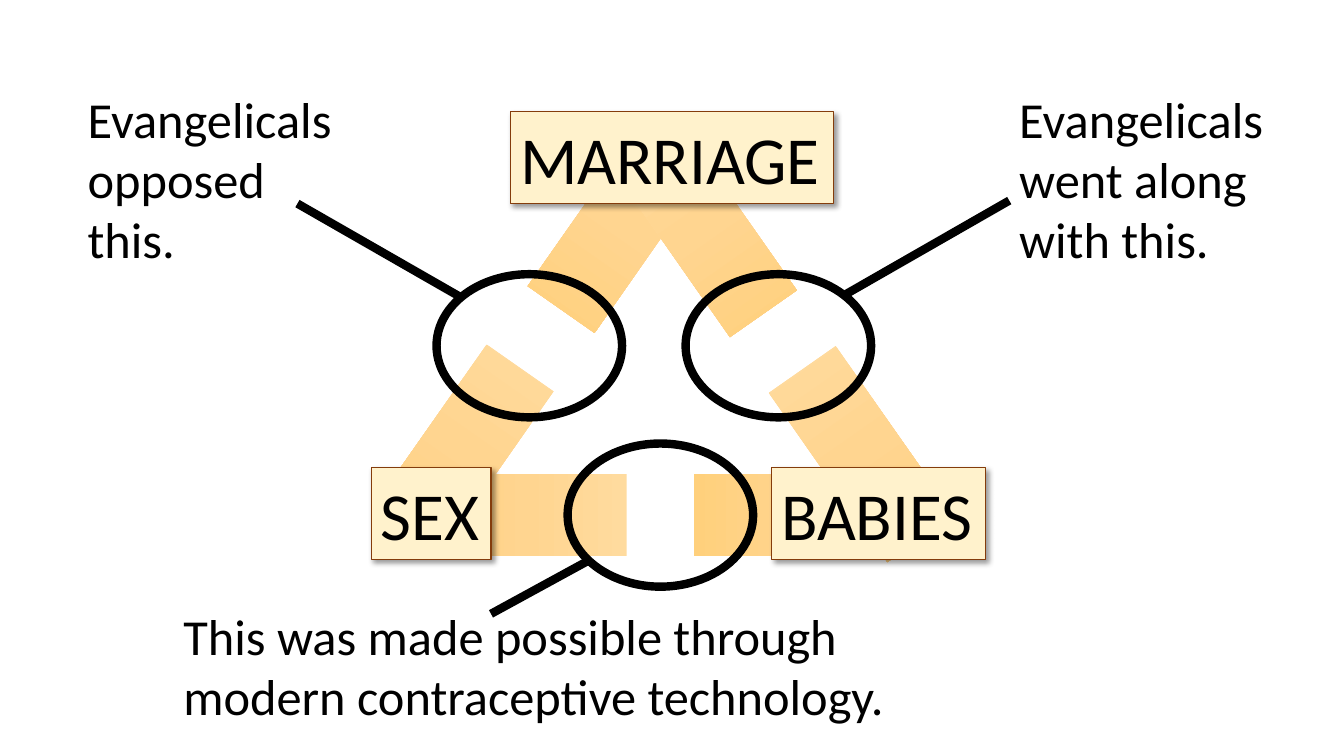
from lxml import etree
from pptx import Presentation
from pptx.dml.color import RGBColor
from pptx.enum.shapes import MSO_CONNECTOR, MSO_SHAPE
from pptx.enum.text import MSO_ANCHOR, MSO_AUTO_SIZE, PP_ALIGN
from pptx.oxml import parse_xml
from pptx.oxml.ns import nsdecls, qn
from pptx.util import Pt

RECTANGLE = MSO_SHAPE.RECTANGLE
RING = MSO_SHAPE.FLOWCHART_CONNECTOR
STRAIGHT = MSO_CONNECTOR.STRAIGHT
LEFT = PP_ALIGN.LEFT
TOP, MIDDLE = MSO_ANCHOR.TOP, MSO_ANCHOR.MIDDLE
FIT_SHAPE = MSO_AUTO_SIZE.SHAPE_TO_FIT_TEXT

EMU_PER_PX = 9144
SLIDE_SIZE = (1333, 750)
FONT = "Calibri"
COLORS = {
    "ink": "000000",
    "label_fill": "FFF2CC",
    "label_line": "843C0B",
    "bar_start": "FFDB9E",
    "bar_middle": "FFD590",
    "bar_end": "FFD07C",
}
BAR_STOPS = [(0, "bar_start"), (50, "bar_middle"), (100, "bar_end")]
BAR_WIDTH = 81
LABEL_HEIGHT = 91
RING_SIZE = (184, 142)

BARS = [
    (418, 347, 200, 35),
    (576, 117, 209, 35),
    (480, 410, 202, 90),
    (657, 122, 208, 325),
    (814, 348, 205, 325),
    (754, 405, 212, 90),
]
LABELS = [
    ("MARRIAGE", 506, 111, 321),
    ("SEX", 368, 464, 119),
    ("BABIES", 765, 464, 212),
]
CALLOUTS = [
    {
        "ring": (680, 272),
        "pointer": (1001, 199, 837, 293),
        "box": (1001, 82, 265, 192),
        "lines": ["Evangelicals", "went along", "with this."],
    },
    {
        "ring": (433, 272),
        "pointer": (295, 202, 459, 296),
        "box": (77, 82, 265, 192),
        "lines": ["Evangelicals", "opposed", "this."],
    },
    {
        "ring": (563, 440),
        "pointer": (584, 556, 487, 609),
        "box": (172, 595, 722, 131),
        "lines": ["This was made possible through", "modern contraceptive technology."],
    },
]


def emu(*lengths):
    return [length * EMU_PER_PX for length in lengths]


def color(name):
    return RGBColor.from_string(COLORS[name])


def write_text(shape, lines, size, anchor=TOP):
    frame = shape.text_frame
    frame.word_wrap = False
    frame.auto_size = FIT_SHAPE
    frame.vertical_anchor = anchor
    for index, line in enumerate(lines):
        para = frame.add_paragraph() if index else frame.paragraphs[0]
        para.alignment = LEFT
        span = para.add_run()
        span.text = line
        span.font.name = FONT
        span.font.size = Pt(size)
        span.font.color.rgb = color("ink")


def add_plain_shape(page, kind, *place):
    shape = page.shapes.add_shape(kind, *emu(*place))
    shape.shadow.inherit = False
    return shape


def set_line(shape, name, width):
    shape.line.color.rgb = color(name)
    shape.line.width = Pt(width)


def add_bar(page, left, top, length, rotation):
    bar = add_plain_shape(page, RECTANGLE, left, top, BAR_WIDTH, length)
    bar.rotation = rotation
    bar.line.fill.background()
    bar.fill.gradient()
    bar.fill.gradient_angle = 270
    stops = bar.element.spPr.find(qn("a:gradFill")).find(qn("a:gsLst"))
    for stop in list(stops):
        stops.remove(stop)
    for position, name in BAR_STOPS:
        stop = etree.SubElement(stops, qn("a:gs"), pos=str(position * 1000))
        etree.SubElement(stop, qn("a:srgbClr"), val=COLORS[name])


def add_label(page, text, left, top, width):
    label = add_plain_shape(page, RECTANGLE, left, top, width, LABEL_HEIGHT)
    label.fill.solid()
    label.fill.fore_color.rgb = color("label_fill")
    set_line(label, "label_line", 0.75)
    effects = label.element.spPr.find(qn("a:effectLst"))
    effects.append(parse_xml(
        f'<a:outerShdw {nsdecls("a")} blurRad="{Pt(4)}" dist="{Pt(3)}" '
        f'dir="2700000" algn="tl" rotWithShape="0">'
        f'<a:srgbClr val="{COLORS["ink"]}"><a:alpha val="40000"/></a:srgbClr>'
        f'</a:outerShdw>'
    ))
    write_text(label, [text], 48, anchor=MIDDLE)


def add_callout(page, callout):
    ring = add_plain_shape(page, RING, *callout["ring"], *RING_SIZE)
    ring.fill.background()
    set_line(ring, "ink", 6)
    pointer = page.shapes.add_connector(STRAIGHT, *emu(*callout["pointer"]))
    set_line(pointer, "ink", 6)
    etree.SubElement(pointer.element.spPr, qn("a:effectLst"))
    box = page.shapes.add_textbox(*emu(*callout["box"]))
    write_text(box, callout["lines"], 36)


def main():
    deck = Presentation()
    deck.slide_width, deck.slide_height = emu(*SLIDE_SIZE)
    page = deck.slides.add_slide(deck.slide_layouts[6])
    for bar in BARS:
        add_bar(page, *bar)
    for label in LABELS:
        add_label(page, *label)
    for callout in CALLOUTS:
        add_callout(page, callout)
    deck.save("out.pptx")


if __name__ == "__main__":
    main()
